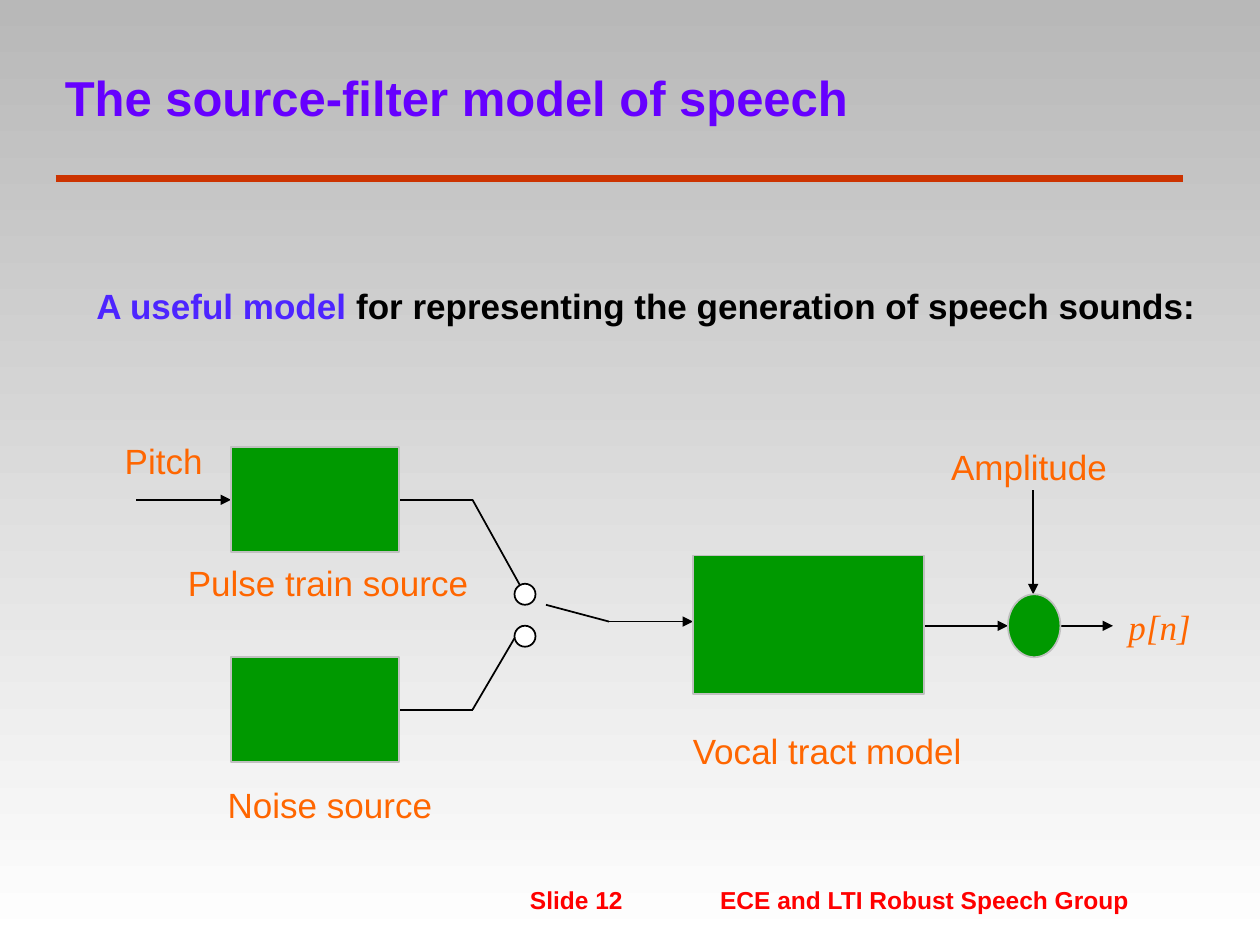
"""Build the slide on the source-filter model of speech."""
from lxml import etree
from pptx import Presentation
from pptx import util as u
from pptx.dml.color import RGBColor
from pptx.enum import shapes, text
from pptx.oxml.ns import qn

THEME = {
    "sans": "Arial", "serif": "Times New Roman",
    "title": "6600FF", "accent": "4D25FF", "ink": "000000", "label": "FF6600",
    "footer": "FF0000", "rule": "CC3300", "block": "009900", "edge": "C0C0C0",
    "contact": "FFFFFF", "sky": "B8B8B8", "ground": "FFFFFF",
    "title_pt": 28, "body_pt": 20, "footer_pt": 14, "rule_pt": 4, "wire_pt": 1,
}
CELL = u.Inches(1) / 12

HEADING = "The source-filter model of speech"
STATEMENT = [("A useful model ", "accent"),
             ("for representing the generation of speech sounds:", "ink")]
FOOTER = "\tSlide 12\tECE and LTI Robust Speech Group"
FOOTER_TABS = (32.3, 50.4)

PULSE_Y, NOISE_Y, SWITCH_Y, OUTPUT_Y = 47.6, 67.6, 59.2, 59.6
RECT, OVAL = shapes.MSO_SHAPE.RECTANGLE, shapes.MSO_SHAPE.OVAL

WIRES = [
    ([(13, PULSE_Y), (22, PULSE_Y)], True),
    ([(38, PULSE_Y), (45, PULSE_Y), (50, 56.6)], False),
    ([(38, NOISE_Y), (45, NOISE_Y), (49.7, 59.6)], False),
    ([(52, 57.6), (58, SWITCH_Y), (66, SWITCH_Y)], True),
    ([(88, OUTPUT_Y), (96, OUTPUT_Y)], True),
    ([(98.4, 46.7), (98.4, 56.6)], True),
    ([(101, OUTPUT_Y), (106, OUTPUT_Y)], True),
]
NODES = [
    (RECT, (22, PULSE_Y - 5, 16, 10), "block", "edge"),
    (RECT, (22, NOISE_Y - 5, 16, 10), "block", "edge"),
    (RECT, (66, 52.9, 22, 13.2), "block", "edge"),
    (OVAL, (96, OUTPUT_Y - 3, 5, 6), "block", "edge"),
    (OVAL, (49, 59.6, 2, 2), "contact", "ink"),
    (OVAL, (49, 55.6, 2, 2), "contact", "ink"),
]
LABELS = [
    ("Pitch", (10.7, 41.3, 9.8, 5.2), {}),
    ("Pulse train source", (16.7, 52.9, 32.3, 5.2), {}),
    ("Noise source", (20.5, 74, 28.4, 5.2), {}),
    ("Vocal tract model", (64.8, 68.9, 28.2, 5.2), {}),
    ("Amplitude", (89.4, 41.8, 21, 5.2), {}),
    ("p[n]", (106.3, 57.1, 10.1, 5.2), {"font": "serif", "italic": True}),
]


def grid(*cells):
    return [u.Emu(round(cell * CELL)) for cell in cells]


def rgb(role):
    return RGBColor.from_string(THEME[role])


def add_text(slide, content, area, *, color="label", size="body_pt", font="sans", bold=False,
             italic=False, wrap=False, anchor=text.MSO_ANCHOR.TOP, pad=0.05, hanging=0, tabs=()):
    frame = slide.shapes.add_textbox(*grid(*area)).text_frame
    frame.word_wrap, frame.vertical_anchor = wrap, anchor
    frame.margin_top = frame.margin_bottom = u.Inches(pad)
    paragraph = frame.paragraphs[0]
    props = paragraph._p.get_or_add_pPr()
    if hanging:
        props.set("marL", str(u.Inches(hanging)))
        props.set("indent", str(-u.Inches(hanging)))
    if tabs:
        stops = etree.SubElement(props, qn("a:tabLst"))
        for stop in grid(*tabs):
            etree.SubElement(stops, qn("a:tab"), pos=str(stop), algn="l")
    for words, role in [(content, color)] if isinstance(content, str) else content:
        run = paragraph.add_run()
        run.text = words
        run.font.name, run.font.size = THEME[font], u.Pt(THEME[size])
        run.font.bold, run.font.italic = bold, italic
        run.font.color.rgb = rgb(role)


def add_wire(slide, start, end, *, color="ink", width="wire_pt", arrow=False):
    wire = slide.shapes.add_connector(shapes.MSO_CONNECTOR.STRAIGHT, *grid(*start, *end))
    wire.line.color.rgb, wire.line.width = rgb(color), u.Pt(THEME[width])
    if arrow:
        etree.SubElement(wire.line._get_or_add_ln(), qn("a:tailEnd"), type="triangle")
    etree.SubElement(wire._element.spPr, qn("a:effectLst"))


def add_node(slide, outline, area, fill, edge):
    node = slide.shapes.add_shape(outline, *grid(*area))
    node.shadow.inherit = False
    node.fill.solid()
    node.fill.fore_color.rgb = rgb(fill)
    node.line.color.rgb, node.line.width = rgb(edge), u.Pt(THEME["wire_pt"])


def paint_background(slide):
    fill = slide.background.fill
    fill.gradient()
    fill.gradient_angle = 270
    for stop, role in zip(fill.gradient_stops, ("sky", "ground")):
        stop.color.rgb = rgb(role)


def main():
    deck = Presentation()
    deck.slide_width, deck.slide_height = grid(120, 90)
    slide = deck.slides.add_slide(deck.slide_layouts[6])
    paint_background(slide)

    add_wire(slide, (5.3, 17), (112.7, 17), color="rule", width="rule_pt")
    add_text(slide, FOOTER, (17, 82.1, 97, 5.6), color="footer", size="footer_pt",
             bold=True, wrap=True, anchor=text.MSO_ANCHOR.BOTTOM, tabs=FOOTER_TABS)
    add_text(slide, HEADING, (5, 4, 108, 8), color="title", size="title_pt",
             bold=True, wrap=True, anchor=text.MSO_ANCHOR.BOTTOM, pad=0)
    add_text(slide, STATEMENT, (8, 26.5, 108, 60), bold=True, wrap=True, hanging=0.43)

    for points, arrow in WIRES:
        for start, end in zip(points, points[1:]):
            add_wire(slide, start, end, arrow=arrow and end == points[-1])
    for node in NODES:
        add_node(slide, *node)
    for words, area, style in LABELS:
        add_text(slide, words, area, **style)

    deck.save("out.pptx")


if __name__ == "__main__":
    main()
